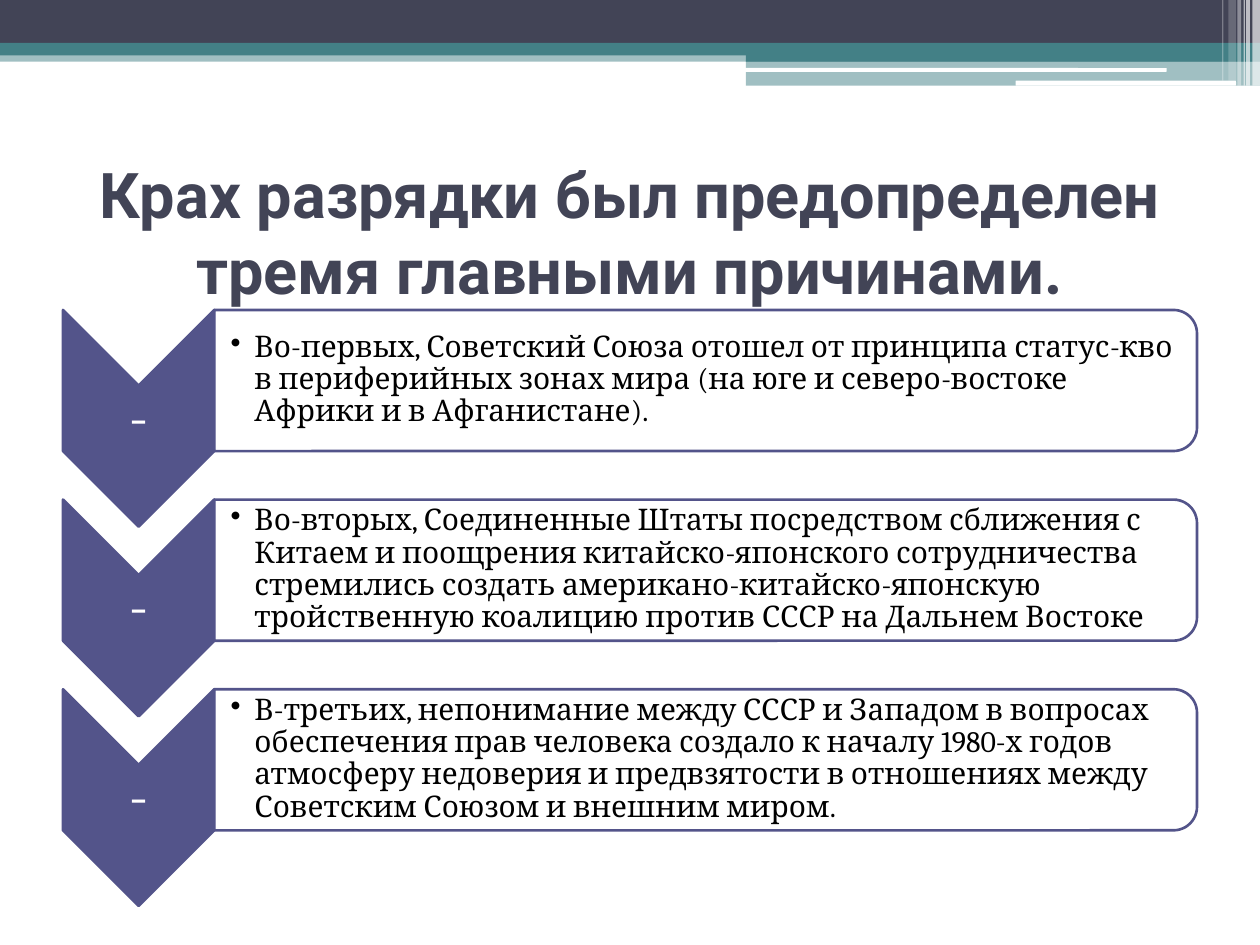
"""Build a slide listing three reasons for the collapse of detente."""
from dataclasses import dataclass

from lxml import etree
from pptx import Presentation
from pptx import util as u
from pptx.dml.color import RGBColor
from pptx.enum import shapes, text
from pptx.oxml.ns import qn


@dataclass(frozen=True)
class Theme:
    dark: str = "424456"
    teal: str = "438086"
    violet: str = "53548A"
    white: str = "FFFFFF"
    black: str = "000000"
    title_font: str = "Roboto"
    body_font: str = "Cambria"
    title_size: int = 36
    mark_size: int = 33
    body_size: int = 17


T = Theme()
MSO = shapes.MSO_SHAPE
TITLE = "Крах разрядки был предопределен тремя главными причинами."
REASONS = [
    "Во-первых, Советский Союза отошел от принципа статус-кво в периферийных "
    "зонах мира (на юге и северо-востоке Африки и в Афганистане).",
    "Во-вторых, Соединенные Штаты посредством сближения с Китаем и поощрения "
    "китайско-японского сотрудничества стремились создать "
    "американо-китайско-японскую тройственную коалицию против СССР на Дальнем Востоке",
    "В-третьих, непонимание между СССР и Западом в вопросах обеспечения прав "
    "человека создало к началу 1980-х годов атмосферу недоверия и предвзятости "
    "в отношениях между Советским Союзом и внешним миром.",
]
BANDS = [
    (0, 0.4, 10, 0.09, T.teal, 50),
    (0, 0, 10, 0.34, T.dark, 100),
    (0, 0.34, 10, 0.1, T.teal, 100),
    (5.92, 0.39, 4.08, 0.1, T.teal, 100),
    (5.92, 0.48, 4.08, 0.2, T.teal, 50),
]
RULES = [(5.91, 0.54, 3.35, 0.03), (8.06, 0.64, 1.75, 0.04)]
STRIPES = [
    (9.94, 0.06, 0.68, 65),
    (9.89, 0.03, 0.68, 65),
    (9.87, 0.01, 0.68, 60),
    (9.82, 0.03, 0.68, 40),
    (9.75, 0.06, 0.64, 20),
    (9.7, 0.01, 0.64, 30),
]
FIRST_TOP, PITCH = 2.46, 1.505


def add_block(parent, kind, box, fill, alpha=100, line=None, rotation=0):
    """Add a filled preset shape, optionally translucent, outlined or rotated."""
    sp = parent.shapes.add_shape(kind, *map(u.Inches, box))
    sp.shadow.inherit = False
    sp.rotation = rotation
    sp.fill.solid()
    sp.fill.fore_color.rgb = RGBColor.from_string(fill)
    if alpha < 100:
        color = sp.fill._xPr.find(qn("a:solidFill"))[0]
        etree.SubElement(color, qn("a:alpha"), val=str(alpha * 1000))
    if line:
        sp.line.color.rgb = RGBColor.from_string(line)
        sp.line.width = u.Pt(1.5)
    else:
        sp.line.fill.background()
    return sp


def format_run(p, font, size, color, bold=False):
    """Set the type of a paragraph's only run."""
    r = p.runs[0]
    r.font.name, r.font.size, r.font.bold = font, u.Pt(size), bold
    r.font.color.rgb = RGBColor.from_string(color)


def add_label(parent, box, words, size, color, insets):
    """Add a wrapped, middle-anchored text box and return its paragraph."""
    tf = parent.shapes.add_textbox(*map(u.Inches, box)).text_frame
    tf.word_wrap = True
    tf.vertical_anchor = text.MSO_ANCHOR.MIDDLE
    tf.margin_left, tf.margin_top, tf.margin_right, tf.margin_bottom = map(u.Inches, insets)
    p = tf.paragraphs[0]
    p.text = words
    p.line_spacing = 0.9
    format_run(p, T.body_font, size, color)
    return p


def add_bullet(p, indent):
    """Give a paragraph a round bullet with a hanging indent."""
    p.level = 1
    pPr = p._p.get_or_add_pPr()
    pPr.set("marL", str(u.Inches(indent)))
    pPr.set("indent", str(-u.Inches(indent)))
    etree.SubElement(pPr, qn("a:buChar"), char="•")


def add_header(s):
    """Draw the bands, rules and stripes along the top edge."""
    for *box, fill, alpha in BANDS:
        add_block(s, MSO.RECTANGLE, box, fill, alpha)
    for box in RULES:
        add_block(s, MSO.ROUNDED_RECTANGLE, box, T.white)
    for left, width, height, alpha in STRIPES:
        add_block(s, MSO.RECTANGLE, (left, 0, width, height), T.white, alpha)


def set_title(s):
    """Place and format the title placeholder."""
    sp = s.shapes.title
    sp.left, sp.top, sp.width, sp.height = map(u.Inches, (0.5, 1.25, 9, 1.17))
    tf = sp.text_frame
    tf.text = TITLE
    tf.word_wrap = True
    tf.vertical_anchor = text.MSO_ANCHOR.MIDDLE
    p = tf.paragraphs[0]
    p.alignment = text.PP_ALIGN.CENTER
    format_run(p, T.title_font, T.title_size, T.dark, bold=True)


def add_reason(group, top, words):
    """Add one chevron with its mark and the panel of text beside it."""
    add_block(group, MSO.CHEVRON, (0.24, top + 0.26, 1.72, 1.2),
              T.violet, line=T.violet, rotation=90)
    mark = add_label(group, (0.5, top + 0.6, 1.2, 0.52), "-",
                     T.mark_size, T.white, [0.02] * 4)
    mark.alignment = text.PP_ALIGN.CENTER
    add_block(group, MSO.ROUND_2_SAME_RECTANGLE, (5.04, top - 3.34, 1.12, 7.8),
              T.white, alpha=90, line=T.violet, rotation=90)
    p = add_label(group, (1.7, top + 0.05, 7.74, 1.01), words,
                  T.body_size, T.black, (0.13, 0.01, 0.01, 0.01))
    add_bullet(p, 0.19)


def main():
    """Build and save the slide."""
    prs = Presentation()
    prs.slide_width, prs.slide_height = u.Inches(10), u.Inches(7.5)
    s = prs.slides.add_slide(prs.slide_layouts[5])
    add_header(s)
    set_title(s)
    group = s.shapes.add_group_shape()
    for i, words in enumerate(REASONS):
        add_reason(group, FIRST_TOP + i * PITCH, words)
    prs.save("out.pptx")


if __name__ == "__main__":
    main()
